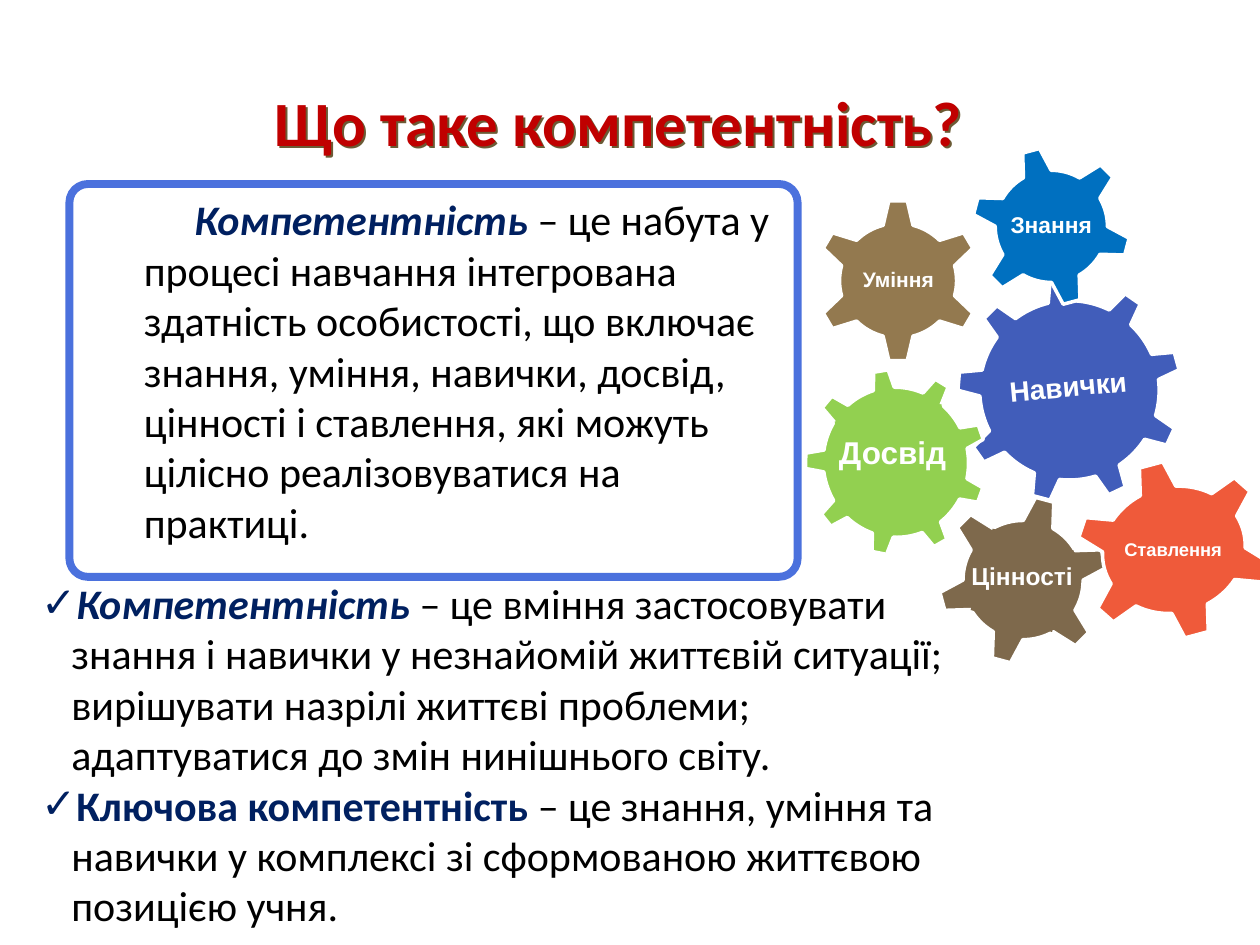
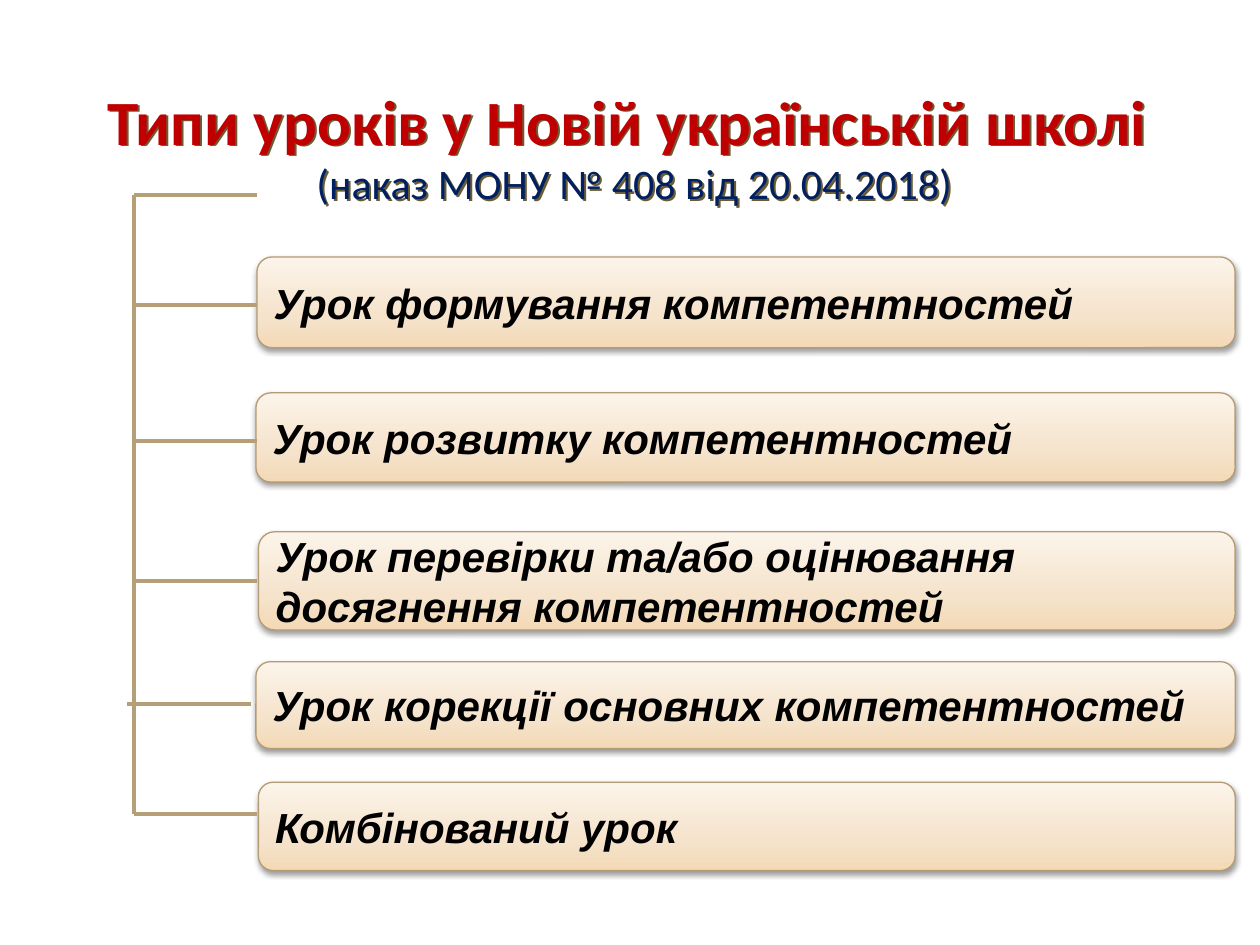
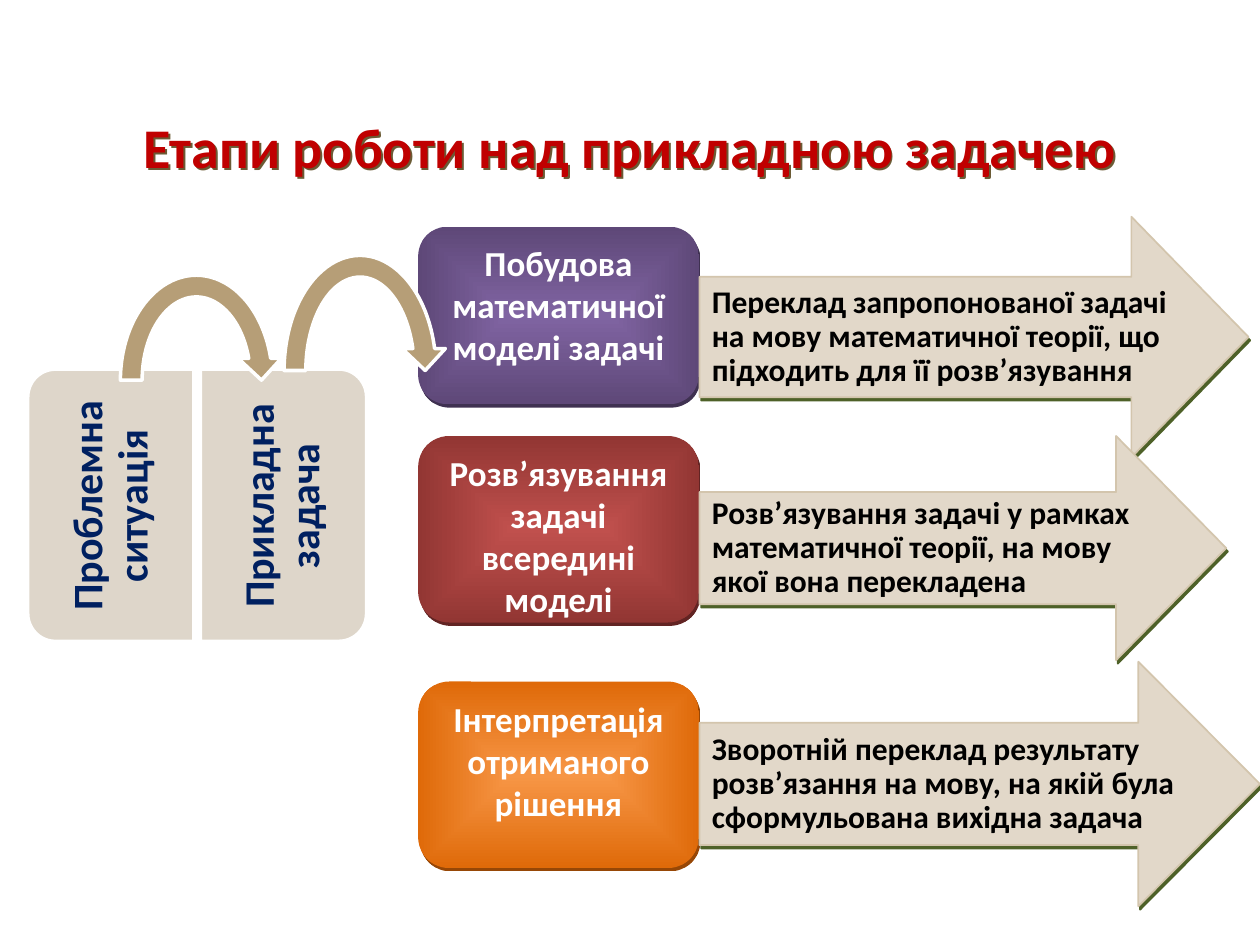
from dataclasses import dataclass
from typing import NamedTuple, Optional

import lxml.etree
import pptx
import pptx.dml.color
import pptx.enum.shapes
import pptx.enum.text
import pptx.oxml.ns
import pptx.util
from pptx.util import Cm, Pt

qn = pptx.oxml.ns.qn
SHAPES = pptx.enum.shapes.MSO_SHAPE
ALIGN = pptx.enum.text.PP_ALIGN
ANCHOR = pptx.enum.text.MSO_ANCHOR


# Theme
@dataclass(frozen=True)
class Theme:
    heading_font: str = "Calibri"
    label_font: str = "Arial"
    red: str = "C00000"
    navy: str = "002060"
    black: str = "000000"
    white: str = "FFFFFF"
    frame: str = "4B71DD"
    sand: str = "B69E77"
    sand_line: str = "B49B73"
    panel: str = "DED6CA"
    arrow: str = "E2D8C9"
    arrow_line: str = "D3C5AD"
    arrow_shadow: str = "4E6128"
    title_shadow: str = "6B5B35"
    title: int = 36
    long_title: int = 32
    body: int = 24
    card: int = 20
    note: int = 18


THEME = Theme()


# Records for repeated parts
class Box(NamedTuple):
    left: float
    top: float
    width: float
    height: float


class Shadow(NamedTuple):
    color: str
    opacity: int
    blur: float
    distance: float
    angle: int


class Gradient(NamedTuple):
    stops: tuple[tuple[int, str], ...]
    angle: Optional[int] = None  # None radiates from the centre


class Run(NamedTuple):
    text: str
    color: Optional[str] = None
    bold: Optional[bool] = None
    italic: Optional[bool] = None
    size: Optional[float] = None
    new_line: bool = False


Insets = tuple[float, float, float, float]
DEFAULT_INSETS: Insets = (0.25, 0.13, 0.25, 0.13)
TIGHT: Insets = (0.05, 0.05, 0.05, 0.05)
OFFSET: Insets = (0.41, 0.13, 0.25, 0.13)
SIDES_ONLY: Insets = (0.25, 0, 0.25, 0)


@dataclass(frozen=True)
class Gear:
    text: str
    size: float
    color: str
    box: Box
    label: Box
    kind: SHAPES = SHAPES.GEAR_6
    turn: float = 0
    label_turn: float = 0
    hub: Optional[Box] = None
    insets: Insets = TIGHT
    spacing: float = 0.9


@dataclass(frozen=True)
class Lesson:
    text: str
    left: float
    top: float
    height: float
    branch: float
    branch_left: float = 2.7


@dataclass(frozen=True)
class Stage:
    name: str
    meaning: str
    card_top: float
    card_height: float
    inner: str
    outer: str
    shadow: str
    arrow: Box
    head: float


# Drawing helpers
def rgb(color: str) -> pptx.dml.color.RGBColor:
    return pptx.dml.color.RGBColor.from_string(color)


def child(parent, tag: str, **attributes):
    node = lxml.etree.SubElement(parent, qn(tag))
    for name, value in attributes.items():
        node.set(name, str(value))
    return node


def add_shadow(shape, shadow: Shadow) -> None:
    shape.shadow.inherit = False
    effects = shape._element.spPr.find(qn("a:effectLst"))
    outer = child(effects, "a:outerShdw", blurRad=int(Pt(shadow.blur)),
                  dist=int(Pt(shadow.distance)), dir=shadow.angle * 60000,
                  algn="ctr", rotWithShape=0)
    tint = child(outer, "a:srgbClr", val=shadow.color)
    child(tint, "a:alpha", val=shadow.opacity * 1000)


def fill_gradient(shape, gradient: Gradient) -> None:
    shape.fill.solid()
    properties = shape._element.spPr
    node = lxml.etree.Element(qn("a:gradFill"), rotWithShape="1")
    stops = child(node, "a:gsLst")
    for position, color in gradient.stops:
        child(child(stops, "a:gs", pos=position * 1000), "a:srgbClr", val=color)
    if gradient.angle is None:
        centre = child(node, "a:path", path="shape")
        child(centre, "a:fillToRect", l=50000, t=50000, r=50000, b=50000)
    else:
        child(node, "a:lin", ang=gradient.angle * 60000, scaled=1)
    properties.replace(properties.find(qn("a:solidFill")), node)


def draw(slide, kind: SHAPES, box: Box, *, fill: str | Gradient | None = None,
         line: Optional[str] = None, weight: float = 2, turn: float = 0,
         adjust: tuple[float, ...] = (), shadow: Optional[Shadow] = None):
    shape = slide.shapes.add_shape(kind, *map(Cm, box))
    shape.rotation = turn
    for index, value in enumerate(adjust):
        shape.adjustments[index] = value
    if isinstance(fill, Gradient):
        fill_gradient(shape, fill)
    elif fill:
        shape.fill.solid()
        shape.fill.fore_color.rgb = rgb(fill)
    else:
        shape.fill.background()
    if line:
        shape.line.color.rgb = rgb(line)
        shape.line.width = Pt(weight)
    else:
        shape.line.fill.background()
    shape.shadow.inherit = False
    if shadow:
        add_shadow(shape, shadow)
    return shape


def write(shape, *paragraphs: list[Run], size: float, color: str = THEME.black,
          font: str = THEME.heading_font, bold: bool = False, italic: bool = False,
          align: ALIGN = ALIGN.LEFT, anchor: ANCHOR = ANCHOR.TOP,
          insets: Insets = DEFAULT_INSETS, spacing: Optional[float] = None,
          margin: float = 0, indent: float = 0, bullet: Optional[str] = None,
          vertical: Optional[str] = None, wrap: bool = True) -> None:
    frame = shape.text_frame
    frame.word_wrap = wrap
    frame.vertical_anchor = anchor
    (frame.margin_left, frame.margin_top,
     frame.margin_right, frame.margin_bottom) = map(Cm, insets)
    if vertical:
        frame._txBody.bodyPr.set("vert", vertical)
    for index, runs in enumerate(paragraphs):
        paragraph = frame.add_paragraph() if index else frame.paragraphs[0]
        paragraph.alignment = align
        if spacing:
            paragraph.line_spacing = spacing
        properties = paragraph._p.get_or_add_pPr()
        properties.set("marL", str(int(Cm(margin))))
        properties.set("indent", str(int(Cm(indent))))
        if bullet:
            child(properties, "a:buFont", typeface=THEME.label_font)
            child(properties, "a:buChar", char=bullet)
        for part in runs:
            if part.new_line:
                paragraph.add_line_break()
            run = paragraph.add_run()
            run.text = part.text
            run.font.name = font
            run.font.size = Pt(part.size or size)
            run.font.bold = bold if part.bold is None else part.bold
            run.font.italic = italic if part.italic is None else part.italic
            run.font.color.rgb = rgb(part.color or color)


def text_box(slide, box: Box, *paragraphs: list[Run], turn: float = 0, **style):
    shape = slide.shapes.add_textbox(*map(Cm, box))
    shape.rotation = turn
    write(shape, *paragraphs, **style)
    return shape


def add_title(slide, box: Box, *runs: Run, size: int = THEME.title) -> None:
    title = text_box(slide, box, list(runs), size=size, color=THEME.red, bold=True,
                     align=ALIGN.CENTER, anchor=ANCHOR.MIDDLE)
    add_shadow(title, Shadow(THEME.title_shadow, 100, 0, 1.6, 45))


def connect(slide, x1: float, y1: float, x2: float, y2: float) -> None:
    line = slide.shapes.add_connector(pptx.enum.shapes.MSO_CONNECTOR.STRAIGHT,
                                      Cm(x1), Cm(y1), Cm(x2), Cm(y2))
    line.line.color.rgb = rgb(THEME.sand)
    line.line.width = Pt(2.25)
    child(line._element.spPr, "a:effectLst")


# Slide 1: what competence is
GEARS = (
    Gear("Навички", 16, "415DBA", Box(19.3, 5.61, 4.52, 4.52), Box(20.19, 6.65, 2.69, 2.34),
         kind=SHAPES.GEAR_9, turn=354.7, label_turn=354.7),
    Gear("Уміння", 12, "93794F", Box(16.43, 4.01, 3.35, 3.3), Box(17.27, 4.85, 1.68, 1.63)),
    Gear("Знання", 13, "0070C0", Box(19.58, 2.95, 3.23, 3.23), Box(20.29, 3.66, 1.8, 1.8),
         turn=345),
    Gear("Досвід", 18, "92D050", Box(16.23, 7.44, 3.66, 3.76), Box(15.44, 8.61, 4.95, 1.02),
         kind=SHAPES.GEAR_9, turn=350.7, hub=Box(16.97, 8.31, 2.18, 1.93),
         insets=OFFSET, spacing=1),
    Gear("Цінності", 14, "7E694C", Box(18.9, 9.98, 3.45, 3.43), Box(18.9, 11.18, 3.25, 0.86),
         turn=15.1, hub=Box(19.76, 10.85, 1.7, 1.7), insets=OFFSET, spacing=1),
    Gear("Ставлення", 10.5, "EF5A3A", Box(21.67, 9.27, 3.99, 3.63),
         Box(22.53, 10.08, 2.24, 2.03), turn=345),
)


def competence_slide(slide) -> None:
    add_title(slide, Box(4.47, 1.73, 16, 1.42), Run("Що таке компетентність?"))

    # Framed definition
    text_box(slide, Box(1.68, 3.78, 14.15, 7.59), [
        Run("Компетентність", THEME.navy, True, True),
        Run(" – це набута у процесі навчання інтегрована здатність особистості, що включає "
            "знання, уміння, навички, досвід, цінності і ставлення, які можуть цілісно "
            "реалізовуватися на практиці."),
    ], size=THEME.body, margin=0.97, indent=1.02)
    draw(slide, SHAPES.ROUNDED_RECTANGLE, Box(1.4, 3.71, 14.68, 7.92),
         line=THEME.frame, weight=4.5, adjust=(0.047,))

    # Gears
    for gear in GEARS:
        draw(slide, gear.kind, gear.box, fill=gear.color, line=THEME.white, turn=gear.turn)
        if gear.hub:
            draw(slide, SHAPES.RECTANGLE, gear.hub, fill=gear.color, turn=gear.turn)
        text_box(slide, gear.label, [Run(gear.text)], turn=gear.label_turn, size=gear.size,
                 color=THEME.white, font=THEME.label_font, bold=True, align=ALIGN.CENTER,
                 anchor=ANCHOR.MIDDLE, insets=gear.insets, spacing=gear.spacing, wrap=False)

    # Checked definitions
    text_box(slide, Box(0.58, 11.48, 18.92, 7.44), [
        Run("Компетентність ", THEME.navy, True, True),
        Run("– це вміння застосовувати знання і навички у незнайомій життєвій ситуації; "
            "вирішувати назрілі життєві проблеми; адаптуватися до змін нинішнього світу."),
    ], [
        Run("Ключова компетентність ", THEME.navy, True),
        Run("– це знання, уміння та навички у комплексі зі сформованою життєвою "
            "позицією учня."),
    ], size=THEME.body, anchor=ANCHOR.MIDDLE, margin=0.61, indent=-0.61, bullet="✓")


# Slide 2: lesson types
LESSONS = (
    Lesson("Урок формування компетентностей", 5.18, 5.18, 1.83, 6.15),
    Lesson("Урок розвитку компетентностей", 5.16, 7.92, 1.8, 8.89),
    Lesson("Урок перевірки та/або оцінювання досягнення компетентностей",
           5.21, 10.72, 1.98, 11.71),
    Lesson("Урок корекції основних компетентностей", 5.16, 13.34, 1.75, 14.2, 2.57),
    Lesson("Комбінований урок", 5.21, 15.77, 1.78, 16.41),
)
LESSON_FILL = Gradient(((0, "F3D9B6"), (35, "F5E3CC"), (100, "FCF4EA")), 270)
LESSON_RIGHT = 24.9
TRUNK_X, TRUNK_TOP, BRANCH_LENGTH = 2.7, 3.94, 2.48


def lessons_slide(slide) -> None:
    add_title(slide, Box(0.89, 1.73, 23.8, 2.39),
              Run("Типи уроків у Новій українській школі "),
              Run("(наказ МОНУ № 408 від 20.04.2018)", THEME.navy, False,
                  size=THEME.body, new_line=True))
    for lesson in LESSONS:
        bar = draw(slide, SHAPES.ROUNDED_RECTANGLE,
                   Box(lesson.left, lesson.top, LESSON_RIGHT - lesson.left, lesson.height),
                   fill=LESSON_FILL, line=THEME.sand_line, weight=0.75,
                   shadow=Shadow(THEME.black, 38, 3.1, 1.6, 90))
        write(bar, [Run(lesson.text)], size=THEME.body, font=THEME.label_font,
              bold=True, italic=True, anchor=ANCHOR.MIDDLE)

    # Tree
    connect(slide, TRUNK_X, TRUNK_TOP, TRUNK_X, LESSONS[-1].branch)
    connect(slide, TRUNK_X, TRUNK_TOP, TRUNK_X + BRANCH_LENGTH, TRUNK_TOP)
    for lesson in LESSONS:
        connect(slide, lesson.branch_left, lesson.branch,
                lesson.branch_left + BRANCH_LENGTH, lesson.branch)


# Slide 3: stages of work on an applied problem
STAGES = (
    Stage("Побудова математичної моделі задачі",
          "Переклад запропонованої задачі на мову математичної теорії, що підходить "
          "для її розв’язування",
          4.57, 3.58, "8064A2", "5E4878", "3F3151", Box(14.1, 4.37, 11.07, 4.85), 0.487),
    Stage("Розв’язування задачі всередині моделі",
          "Розв’язування задачі у рамках математичної теорії, на мову якої вона перекладена",
          8.79, 3.76, "C0504D", "923633", "622423", Box(14.1, 8.79, 10.62, 4.52), 0.491),
    Stage("Інтерпретація отриманого рішення",
          "Зворотній переклад результату розв’язання на мову, на якій була сформульована "
          "вихідна задача",
          13.74, 3.76, "F79646", "DF6A09", "974706", Box(14.1, 13.34, 11.3, 4.93), 0.497),
)
# Text, panel left, panel turn, label left, label insets
START_PANELS = (
    ("Проблемна ситуація", -0.51, 270, 0.71, (0.25, 0.43, 0.38, 0.43)),
    ("Прикладна задача", 2.97, 90, 4.04, (0.38, 0.43, 0.25, 0.43)),
)
LOOPS = (Box(2.21, 5.33, 3.5, 4.67), Box(5.51, 4.93, 3.5, 5.08))


def stages_slide(slide) -> None:
    for stage in STAGES:
        card = draw(slide, SHAPES.ROUNDED_RECTANGLE,
                    Box(8.43, stage.card_top, 5.66, stage.card_height),
                    fill=Gradient(((0, stage.inner), (100, stage.outer))), adjust=(0.167,),
                    shadow=Shadow(stage.shadow, 100, 0, 2.2, 63))
        write(card, [Run(stage.name)], size=THEME.card, color=THEME.white, bold=True,
              align=ALIGN.CENTER)
    for stage in STAGES:
        arrow = draw(slide, SHAPES.RIGHT_ARROW, stage.arrow, fill=THEME.arrow,
                     line=THEME.arrow_line, weight=1, adjust=(0.5, stage.head),
                     shadow=Shadow(THEME.arrow_shadow, 100, 0, 2.2, 63))
        write(arrow, [Run(stage.meaning)], size=THEME.note, bold=True,
              anchor=ANCHOR.MIDDLE, insets=SIDES_ONLY, spacing=0.9)

    # Starting point
    for text, left, turn, label_left, insets in START_PANELS:
        draw(slide, SHAPES.ROUND_2_SAME_RECTANGLE, Box(left, 8.51, 5.49, 3.35),
             fill=THEME.panel, line=THEME.white, turn=turn, adjust=(0.167, 0))
        text_box(slide, Box(label_left, 7.62, 3.2, 5.16), [Run(text)], size=THEME.body,
                 color=THEME.navy, bold=True, align=ALIGN.CENTER, anchor=ANCHOR.MIDDLE,
                 insets=insets, spacing=0.9, vertical="vert270")
    for loop in LOOPS:
        draw(slide, SHAPES.CIRCULAR_ARROW, loop, fill=THEME.sand, line=THEME.white,
             adjust=(0.125, 11.423, 204.577, 108, 0.125))

    add_title(slide, Box(0.61, 1.73, 24.18, 2.44),
              Run("Етапи роботи над прикладною задачею"), size=THEME.long_title)


def main() -> None:
    deck = pptx.Presentation()
    deck.slide_width, deck.slide_height = Cm(25.4), Cm(19.05)
    for build in (competence_slide, lessons_slide, stages_slide):
        build(deck.slides.add_slide(deck.slide_layouts[6]))
    deck.save("out.pptx")


if __name__ == "__main__":
    main()
